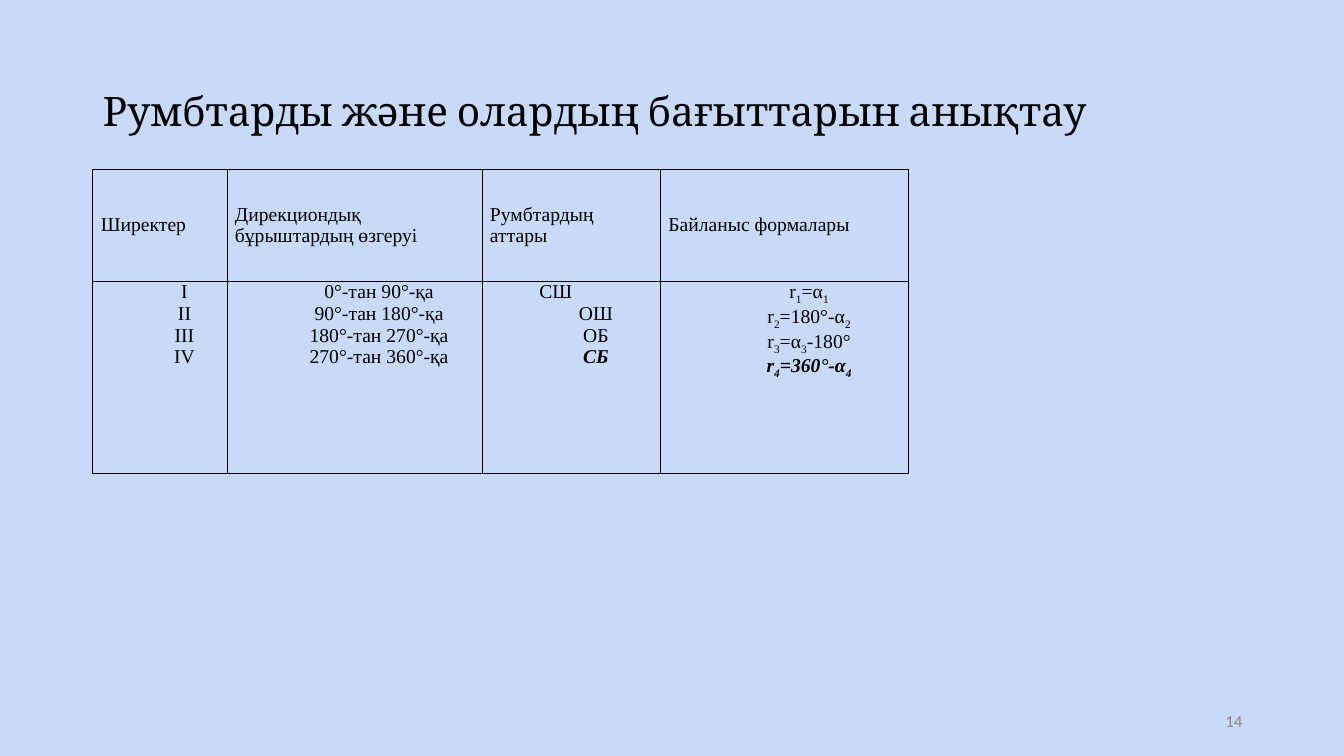
from dataclasses import dataclass

from lxml import etree
from pptx import Presentation
from pptx import util as u
from pptx.dml.color import RGBColor
from pptx.enum import text
from pptx.oxml.ns import qn

PX = 9144  # 100 px to the inch


@dataclass(frozen=True)
class Theme:
    background: str = "C9DAF8"
    ink: str = "000000"
    muted: str = "888888"
    title_font: str = "Cambria"
    table_font: str = "Times New Roman"
    number_font: str = "Calibri"
    title_size: int = 29
    table_size: int = 14
    number_size: int = 12
    border_width: float = 0.5


LEFT, CENTER, RIGHT = text.PP_ALIGN.LEFT, text.PP_ALIGN.CENTER, text.PP_ALIGN.RIGHT
MIDDLE, TOP = text.MSO_ANCHOR.MIDDLE, text.MSO_ANCHOR.TOP

HEADERS = ["Ширектер", "Дирекциондық бұрыштардың өзгеруі",
           "Румбтардың аттары", "Байланыс формалары"]
# An underscore makes the next character a subscript
QUARTERS = [
    ("I", "0°-тан 90°-қа", "СШ", "r_1=α_1"),
    ("II", "90°-тан 180°-қа", "ОШ", "r_2=180°-α_2"),
    ("III", "180°-тан 270°-қа", "ОБ", "r_3=α_3-180°"),
    ("IV", "270°-тан 360°-қа", "СБ", "r_4=360°-α_4"),
]
COLUMN_WIDTHS = [133, 253, 177, 246]
ROW_HEIGHTS = [111, 191]
FIRST_LINE_INDENT = 49


def write(para, content, *, font, size, color, align=LEFT, strong=False, indent=0):
    """Fill one paragraph with formatted runs."""
    para.alignment = align
    if indent:
        properties = para._p.get_or_add_pPr()
        properties.set("marL", "0")
        properties.set("indent", str(indent * PX))
    first, *rest = content.split("_")
    pieces = [(first, False)]
    for part in rest:
        pieces += [(part[0], True), (part[1:], False)]
    for piece, subscript in pieces:
        if not piece:
            continue
        span = para.add_run()
        span.text = piece
        span.font.name = font
        span.font.size = u.Pt(size)
        span.font.color.rgb = RGBColor.from_string(color)
        span.font.bold = span.font.italic = strong
        if subscript:
            span.font._element.set("baseline", "-25000")


class SlideBuilder:
    def __init__(self, deck, theme):
        self.theme = theme
        self.page = deck.slides.add_slide(deck.slide_layouts[5])
        fill = self.page.background.fill
        fill.solid()
        fill.fore_color.rgb = RGBColor.from_string(theme.background)

    def place(self, box, left, top, width, height):
        box.left, box.top = left * PX, top * PX
        box.width, box.height = width * PX, height * PX

    def title(self, content, *bounds):
        box = self.page.shapes.title
        self.place(box, *bounds)
        frame = box.text_frame
        frame.word_wrap = True
        frame.auto_size = text.MSO_AUTO_SIZE.NONE
        frame.vertical_anchor = MIDDLE
        para = frame.paragraphs[0]
        para.line_spacing = 0.9
        write(para, content, font=self.theme.title_font,
              size=self.theme.title_size, color=self.theme.ink)

    def page_number(self, content, *bounds):
        box = self.page.shapes.add_textbox(*(length * PX for length in bounds))
        frame = box.text_frame
        frame.word_wrap = True
        frame.vertical_anchor = MIDDLE
        write(frame.paragraphs[0], content, font=self.theme.number_font,
              size=self.theme.number_size, color=self.theme.muted, align=RIGHT)

    def table(self, left, top, widths, heights):
        frame = self.page.shapes.add_table(
            len(heights), len(widths), left * PX, top * PX,
            sum(widths) * PX, sum(heights) * PX)
        table = frame.table
        table.first_row = table.horz_banding = False
        for column, width in zip(table.columns, widths):
            column.width = width * PX
        for row, height in zip(table.rows, heights):
            row.height = height * PX
        return table

    def cell(self, cell, lines, anchor):
        """Style a cell; lines holds (text, format) pairs."""
        cell.margin_left = cell.margin_right = 8 * PX
        cell.margin_top = cell.margin_bottom = 0
        cell.vertical_anchor = anchor
        cell.fill.background()
        self.borders(cell)
        frame = cell.text_frame
        for index, (content, style) in enumerate(lines):
            para = frame.add_paragraph() if index else frame.paragraphs[0]
            write(para, content, font=self.theme.table_font,
                  size=self.theme.table_size, color=self.theme.ink, **style)

    def borders(self, cell):
        properties = cell._tc.get_or_add_tcPr()
        for index, side in enumerate(("lnL", "lnR", "lnT", "lnB")):
            line = etree.Element(qn(f"a:{side}"), w=str(u.Pt(self.theme.border_width)))
            solid = etree.SubElement(line, qn("a:solidFill"))
            etree.SubElement(solid, qn("a:srgbClr"), val=self.theme.ink)
            properties.insert(index, line)


def main():
    deck = Presentation()
    deck.slide_width, deck.slide_height = 1333 * PX, 750 * PX
    slide = SlideBuilder(deck, Theme())

    # Title and page number
    slide.title("Румбтарды және олардың бағыттарын анықтау", 92, 40, 1150, 145)
    slide.page_number("14", 942, 695, 300, 40)

    # Table of quarters: one header row, one row with four lines per cell
    table = slide.table(92, 168, COLUMN_WIDTHS, ROW_HEIGHTS)
    for column, header in enumerate(HEADERS):
        slide.cell(table.cell(0, column), [(header, {})], MIDDLE)
        lines = []
        for row, quarter in enumerate(QUARTERS):
            content = quarter[column]
            style = {
                "align": LEFT if content == "СШ" else CENTER,
                "strong": row == 3 and column >= 2,
                "indent": FIRST_LINE_INDENT,
            }
            lines.append((content, style))
        slide.cell(table.cell(1, column), lines, TOP)

    deck.save("out.pptx")


if __name__ == "__main__":
    main()
